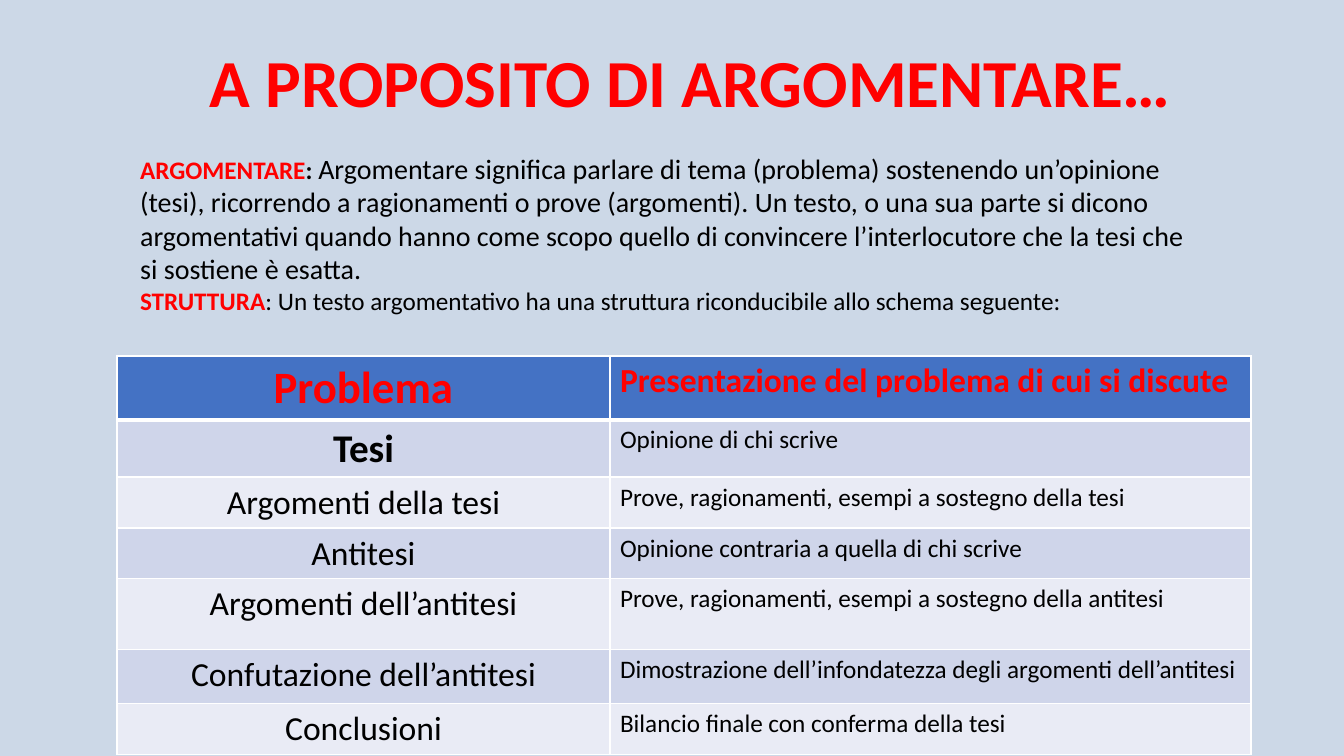
from dataclasses import dataclass

from lxml import etree
from pptx import Presentation
from pptx.dml.color import RGBColor
from pptx.enum.text import MSO_ANCHOR, MSO_AUTO_SIZE, PP_ALIGN
from pptx.oxml.ns import qn
from pptx.util import Emu, Pt

TOP = MSO_ANCHOR.TOP
GROW = MSO_AUTO_SIZE.SHAPE_TO_FIT_TEXT
LEFT = PP_ALIGN.LEFT
CENTER = PP_ALIGN.CENTER
EMU_PER_PX = 914400 / 100.8


@dataclass(frozen=True)
class Theme:
    font: str = "Calibri"
    background: str = "CCD8E7"
    accent: str = "FF0000"
    ink: str = "000000"
    line: str = "FFFFFF"
    header: str = "4472C4"
    bands: tuple = ("CFD5EA", "E9EBF5")
    title_size: int = 48
    text_size: int = 20
    label_size: int = 18
    header_sizes: tuple = (32, 24)
    thesis_size: int = 28
    stage_size: int = 24


THEME = Theme()

DEFINITION = (
    "Argomentare significa parlare di tema (problema) sostenendo un’opinione "
    "(tesi), ricorrendo a ragionamenti o prove (argomenti). Un testo, o una sua "
    "parte si dicono argomentativi quando hanno come scopo quello di convincere "
    "l’interlocutore che la tesi che si sostiene è esatta."
)
STRUCTURE = ": Un testo argomentativo ha una struttura riconducibile allo schema seguente:"
INTRODUCTION = [
    [
        ("ARGOMENTARE", THEME.label_size, THEME.accent, True),
        (": ", THEME.label_size, THEME.ink, True),
        (DEFINITION, THEME.text_size, THEME.ink, False),
    ],
    [
        ("STRUTTURA", THEME.label_size, THEME.accent, True),
        (STRUCTURE, THEME.label_size, THEME.ink, False),
    ],
]
SCHEMA = [
    ("Problema", "Presentazione del problema di cui si discute", 63),
    ("Tesi", "Opinione di chi scrive", 57),
    ("Argomenti della tesi", "Prove, ragionamenti, esempi a sostegno della tesi", 51),
    ("Antitesi", "Opinione contraria a quella di chi scrive", 50),
    ("Argomenti dell’antitesi", "Prove, ragionamenti, esempi a sostegno della antitesi", 71),
    ("Confutazione dell’antitesi", "Dimostrazione dell’infondatezza degli argomenti dell’antitesi", 54),
    ("Conclusioni", "Bilancio finale con conferma della tesi", 51),
]
COLUMN_WIDTHS = (493, 641)


def px(length):
    return Emu(round(length * EMU_PER_PX))


def style_span(span, size, color, bold):
    span.font.name = THEME.font
    span.font.size = Pt(size)
    span.font.bold = bold
    span.font.color.rgb = RGBColor.from_string(color)


def place(box, left, top, width, height):
    box.left, box.top, box.width, box.height = map(px, (left, top, width, height))
    box.text_frame.word_wrap = True
    box.text_frame.auto_size = GROW
    box.text_frame.vertical_anchor = TOP


def add_line_fill(line, color):
    fill = etree.SubElement(line, qn("a:solidFill"))
    etree.SubElement(fill, qn("a:srgbClr")).set("val", color)


def outline_span(span, width, color):
    line = etree.Element(qn("a:ln"), w=str(Pt(width)))
    add_line_fill(line, color)
    span.font._element.insert(0, line)


def fill_title(box):
    place(box, 130, 35, 1121, 92)
    para = box.text_frame.paragraphs[0]
    para.text = "A PROPOSITO DI ARGOMENTARE…"
    para.alignment = CENTER
    style_span(para.runs[0], THEME.title_size, THEME.accent, True)
    outline_span(para.runs[0], 1.06, THEME.line)


def fill_introduction(box):
    place(box, 130, 146, 1082, 238)
    frame = box.text_frame
    for index, spans in enumerate(INTRODUCTION):
        para = frame.paragraphs[0] if index == 0 else frame.add_paragraph()
        properties = para._p.get_or_add_pPr()
        properties.set("marL", "0")
        properties.set("indent", "0")
        etree.SubElement(properties, qn("a:buNone"))
        para.alignment = LEFT
        para.space_before = Pt(0)
        for text, size, color, bold in spans:
            span = para.add_run()
            span.text = text
            style_span(span, size, color, bold)


def set_borders(cell, bottom_width):
    properties = cell._tc.get_or_add_tcPr()
    widths = {"a:lnL": 1, "a:lnR": 1, "a:lnT": 1, "a:lnB": bottom_width}
    for position, (tag, width) in enumerate(widths.items()):
        line = etree.Element(qn(tag), w=str(Pt(width)))
        add_line_fill(line, THEME.line)
        properties.insert(position, line)


def fill_cell(cell, text, size, color, bold, alignment, fill):
    cell.fill.solid()
    cell.fill.fore_color.rgb = RGBColor.from_string(fill)
    para = cell.text_frame.paragraphs[0]
    para.text = text
    para.alignment = alignment
    style_span(para.runs[0], size, color, bold)


def row_style(index):
    if index == 0:
        return THEME.header_sizes, THEME.accent, THEME.header
    stage_size = THEME.thesis_size if index == 1 else THEME.stage_size
    return (stage_size, THEME.label_size), THEME.ink, THEME.bands[(index - 1) % 2]


def add_schema(page):
    height = sum(row[2] for row in SCHEMA)
    frame = page.shapes.add_table(
        len(SCHEMA), len(COLUMN_WIDTHS), px(117), px(356), px(sum(COLUMN_WIDTHS)), px(height)
    )
    table = frame.table
    for column, width in zip(table.columns, COLUMN_WIDTHS):
        column.width = px(width)
    for index, (stage, meaning, row_height) in enumerate(SCHEMA):
        table.rows[index].height = px(row_height)
        sizes, color, fill = row_style(index)
        stage_cell, meaning_cell = table.rows[index].cells
        fill_cell(stage_cell, stage, sizes[0], color, index < 2, CENTER, fill)
        fill_cell(meaning_cell, meaning, sizes[1], color, index == 0, LEFT, fill)
        for cell in (stage_cell, meaning_cell):
            set_borders(cell, 3 if index == 0 else 1)


def main():
    deck = Presentation()
    deck.slide_width, deck.slide_height = px(1344), px(756)
    page = deck.slides.add_slide(deck.slide_layouts[1])
    page.background.fill.solid()
    page.background.fill.fore_color.rgb = RGBColor.from_string(THEME.background)
    fill_title(page.shapes.title)
    fill_introduction(page.placeholders[1])
    add_schema(page)
    deck.save("out.pptx")


if __name__ == "__main__":
    main()
